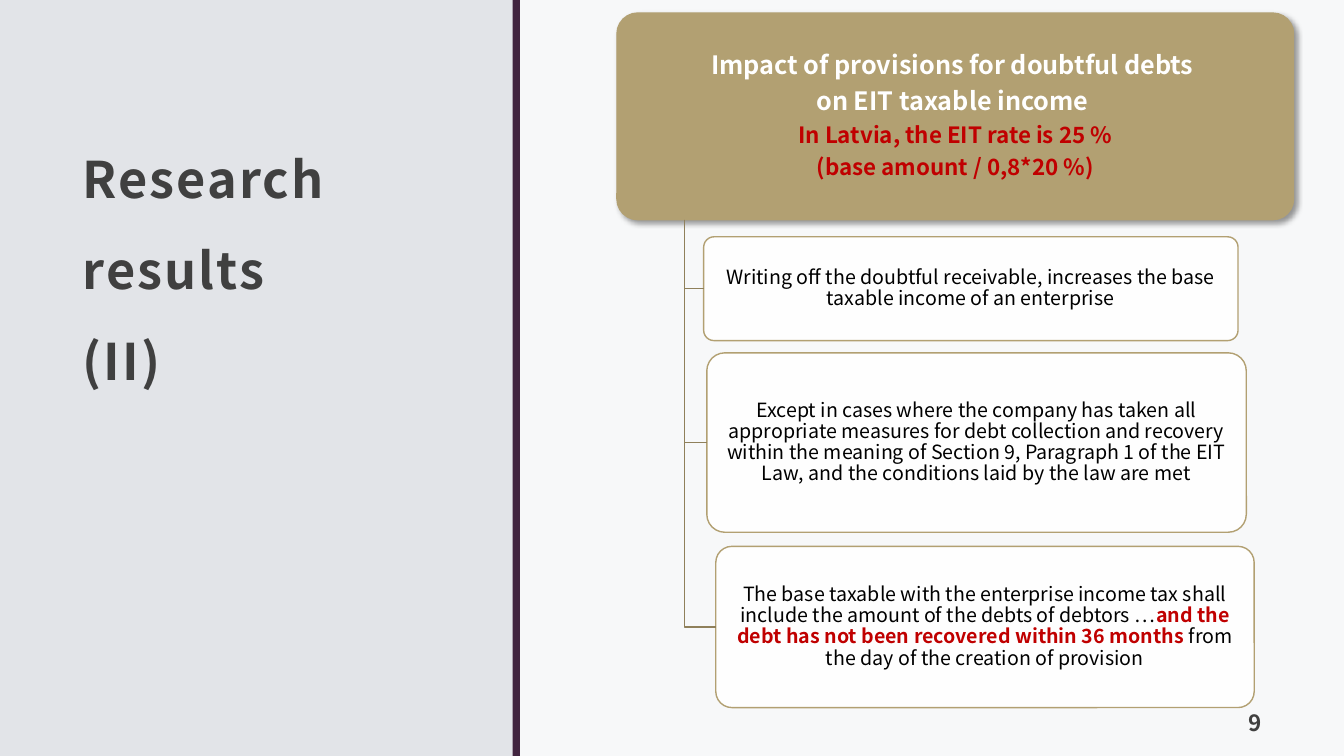
from dataclasses import dataclass

from pptx import Presentation
from pptx.dml.color import RGBColor
from pptx.enum.shapes import MSO_SHAPE as Preset
from pptx.enum.text import MSO_ANCHOR as Anchor, MSO_AUTO_SIZE as AutoSize, PP_ALIGN as Align
from pptx.oxml import parse_xml
from pptx.oxml.ns import nsdecls, qn
from pptx.util import Inches, Pt


@dataclass(frozen=True)
class Theme:
    font: str = "Noto Sans CJK JP"
    backdrop: str = "E2E4E8"
    white: str = "FFFFFF"
    plum: str = "41243F"
    gold: str = "B2A072"
    branch: str = "8F805B"
    heading: str = "404040"
    body: str = "000000"
    alert: str = "C00000"
    title_size: int = 36
    lead_size: int = 18
    note_size: int = 16
    card_size: int = 14
    tracking: float = 1.5


class Deck:
    def __init__(self, theme):
        self.theme = theme
        self.presentation = Presentation()
        self.presentation.slide_width = Inches(13.33)
        self.presentation.slide_height = Inches(7.5)
        self.slide = None

    def add_slide(self):
        self.slide = self.presentation.slides.add_slide(self.presentation.slide_layouts[5])
        backdrop = self.slide.background.fill
        backdrop.solid()
        backdrop.fore_color.rgb = RGBColor.from_string(self.theme.backdrop)

    def box(self, left, top, width, height):
        across, down = self.presentation.slide_width, self.presentation.slide_height
        return [int(share * side / 100)
                for share, side in zip((left, top, width, height), (across, down) * 2)]

    def block(self, area, fill, line=None, opacity=100, preset=Preset.RECTANGLE):
        block = self.slide.shapes.add_shape(preset, *self.box(*area))
        block.shadow.inherit = False
        block.fill.solid()
        block.fill.fore_color.rgb = RGBColor.from_string(fill)
        if opacity < 100:
            colour = block._element.spPr.find(qn("a:solidFill"))[0]
            colour.append(parse_xml(f'<a:alpha {nsdecls("a")} val="{opacity * 1000}"/>'))
        self.outline(block, line)
        return block

    def outline(self, block, line):
        if line is None:
            block.line.fill.background()
        else:
            block.line.color.rgb = RGBColor.from_string(line)
            block.line.width = Pt(1)

    def card(self, area, paragraphs, fill, opacity=100, insets=(0.03, 0.02, 0.03, 0.02)):
        card = self.block(area, fill, self.theme.gold, opacity, Preset.ROUNDED_RECTANGLE)
        card.adjustments[0] = 0.1
        self.set_text(card, paragraphs, insets, Anchor.MIDDLE,
                      alignment=Align.CENTER, line_spacing=0.9)
        for paragraph, runs in zip(card.text_frame.paragraphs, paragraphs):
            paragraph.space_after = Pt(runs[0][1] * 0.35)
        return card

    def cast_shadow(self, block):
        effects = block._element.spPr.find(qn("a:effectLst"))
        effects.append(parse_xml(
            f'<a:outerShdw {nsdecls("a")} blurRad="{Pt(4)}" dist="{Pt(3)}" dir="2700000" '
            'algn="tl" rotWithShape="0"><a:srgbClr val="000000"><a:alpha val="40000"/>'
            '</a:srgbClr></a:outerShdw>'))

    def branch(self, trunk, card):
        trunk_x = trunk.left + trunk.width // 10
        middle = card.top + card.height // 2
        pen = self.slide.shapes.build_freeform(trunk_x, trunk.top + trunk.height)
        pen.add_line_segments([(trunk_x, middle), (card.left, middle)], close=False)
        elbow = pen.convert_to_shape()
        elbow.shadow.inherit = False
        elbow.fill.background()
        self.outline(elbow, self.theme.branch)

    def title(self, area, text):
        title = self.slide.shapes.title
        title.left, title.top, title.width, title.height = self.box(*area)
        style = (self.theme.title_size, self.theme.heading, True, self.theme.tracking)
        self.set_text(title, [[(text, *style)]], (0.12, 0.12, 0.12, 0.1), Anchor.MIDDLE,
                      alignment=Align.LEFT, line_spacing=1.5)

    def page_number(self, area, text):
        number = self.slide.shapes.add_textbox(*self.box(*area))
        style = (self.theme.note_size, self.theme.heading, True, self.theme.tracking)
        self.set_text(number, [[(text, *style)]], (0.12, 0.12, 0.12, 0.1), Anchor.BOTTOM,
                      alignment=Align.RIGHT)

    def set_text(self, holder, paragraphs, insets, anchor, **layout):
        frame = holder.text_frame
        sides = ("margin_left", "margin_top", "margin_right", "margin_bottom")
        settings = dict(zip(sides, map(Inches, insets)), word_wrap=True,
                        auto_size=AutoSize.NONE, vertical_anchor=anchor)
        for name, value in settings.items():
            setattr(frame, name, value)
        for index, runs in enumerate(paragraphs):
            paragraph = frame.add_paragraph() if index else frame.paragraphs[0]
            for name, value in layout.items():
                setattr(paragraph, name, value)
            for text, *style in runs:
                for position, part in enumerate(text.split("\n")):
                    if position:
                        paragraph.add_line_break()
                    self.add_run(paragraph, part, *style)

    def add_run(self, paragraph, text, size, colour, bold=False, tracking=0):
        run = paragraph.add_run()
        run.text = text
        for name, value in {"name": self.theme.font, "size": Pt(size), "bold": bold}.items():
            setattr(run.font, name, value)
        run.font.color.rgb = RGBColor.from_string(colour)
        if tracking:
            run._r.get_or_add_rPr().set("spc", str(int(tracking * 100)))


def main():
    theme = Theme()
    deck = Deck(theme)
    deck.add_slide()
    deck.block((38.71, 0, 61.29, 100), theme.white, opacity=75)
    deck.block((38.15, 0, 0.53, 100), theme.plum)
    deck.title((5.25, 10.27, 27.98, 46.4), "Research results\n(II)")

    lead = (theme.lead_size, theme.white, True)
    note = (theme.note_size, theme.alert, True)
    plain = (theme.card_size, theme.body)
    stress = (theme.card_size, theme.alert, True)

    impact = deck.card((45.91, 1.73, 50.34, 27.33), [
        [("Impact of provisions for doubtful debts ", *lead)],
        [("on EIT taxable income ", *lead)],
        [("In Latvia, the EIT rate is 25 %", *note)],
        [("(base amount / 0,8*20 %)", *note)],
    ], theme.gold, insets=(0.04, 0.03, 0.04, 0.03))
    deck.cast_shadow(impact)

    rules = [
        ((52.36, 31.33, 39.76, 13.73), [
            ("Writing off the doubtful receivable, increases the base taxable income "
             "of an enterprise", *plain)]),
        ((52.59, 46.67, 40.14, 23.73), [
            ("Except in cases where the company has taken all appropriate measures for debt "
             "collection and recovery within the meaning of Section 9, Paragraph 1 of the EIT "
             "Law, and the conditions laid by the law are met", *plain)]),
        ((53.26, 72.27, 40.06, 21.33), [
            ("The base taxable with the enterprise income tax shall include the amount of "
             "the debts of debtors …", *plain),
            ("and the debt has not been recovered within 36 months ", *stress),
            ("from the day of the creation of provision", *plain)]),
    ]
    for area, runs in rules:
        deck.branch(impact, deck.card(area, [runs], theme.white, opacity=90))

    deck.page_number((86.72, 92, 8.03, 6.67), "9")
    deck.presentation.save("out.pptx")


if __name__ == "__main__":
    main()
